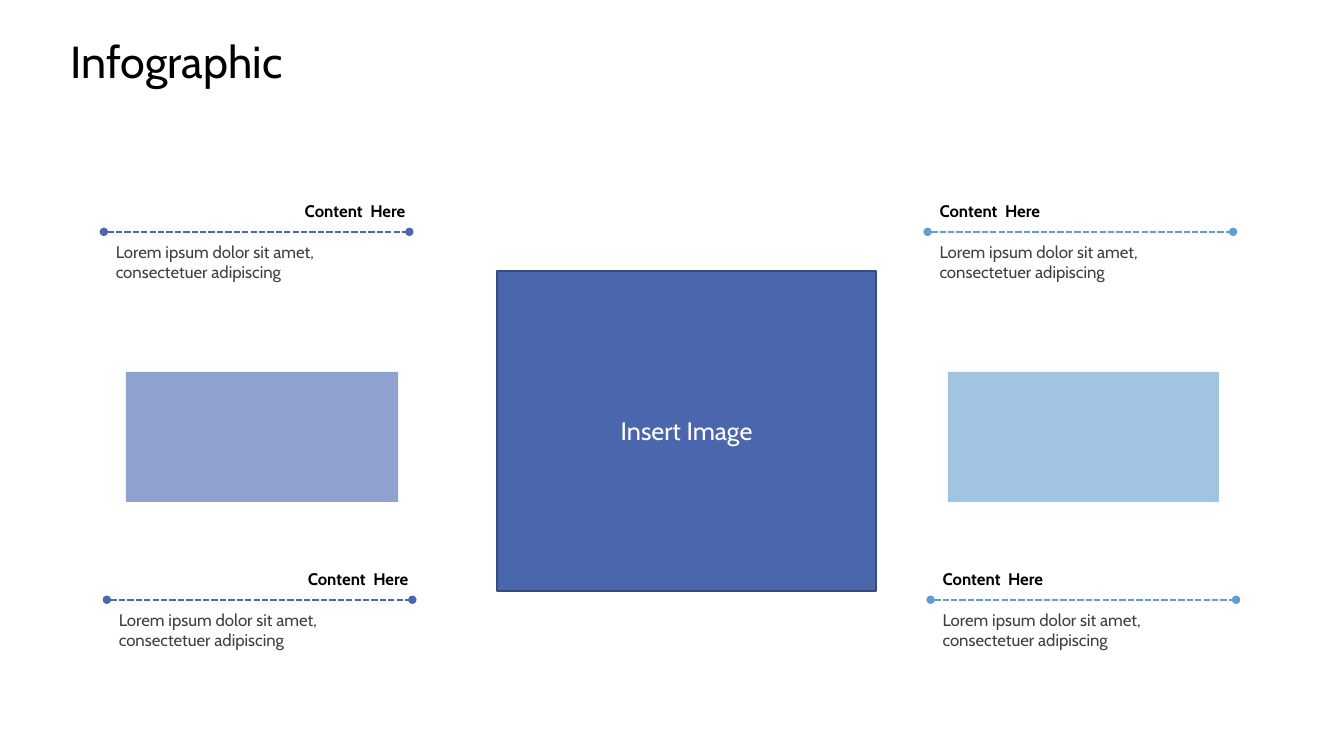
from lxml import etree
from pptx import Presentation
from pptx.dml.color import RGBColor
from pptx.enum import dml, shapes, text
from pptx.oxml.ns import qn
from pptx.util import Inches, Pt

# Content
FONT = "Cabin"
TITLE = "Infographic"
IMAGE_LABEL = "Insert Image"
HEADING = "Content  Here"
BODY = "Lorem ipsum dolor sit amet, consectetuer adipiscing"
BLUE, SKY = "4A66AC", "629DD1"
LEFT, RIGHT = text.PP_ALIGN.LEFT, text.PP_ALIGN.RIGHT

# Columns: left edge, line colour, heading alignment
COLUMNS = [(1.05, BLUE, RIGHT), (9.22, SKY, LEFT)]
# Rows: top edge, shift to the right
ROWS = [(1.94, 0), (5.59, 0.03)]
# Panels: left, top, width, height, fill, outline, label
PANELS = [
    (1.25, 3.69, 2.7, 1.29, "90A2CF", None, None),
    (9.4, 3.69, 2.69, 1.29, "A1C4E3", None, None),
    (4.93, 2.69, 3.76, 3.17, BLUE, "374B7F", IMAGE_LABEL),
]


def color(value):
    return RGBColor.from_string(value)


def write(shape, words, size, ink, align, anchor, bold=False):
    frame = shape.text_frame
    frame.word_wrap = True
    frame.vertical_anchor = anchor
    paragraph = frame.paragraphs[0]
    paragraph.alignment = align
    run = paragraph.add_run()
    run.text = words
    run.font.name = FONT
    run.font.size = Pt(size)
    run.font.bold = bold
    run.font.color.rgb = color(ink)
    return paragraph


def add_text(slide, left, top, width, height, *style, **options):
    box = slide.shapes.add_textbox(*map(Inches, (left, top, width, height)))
    write(box, *style, **options)


def add_dotted_line(slide, left, top, width, ink):
    line = slide.shapes.add_connector(
        shapes.MSO_CONNECTOR.STRAIGHT,
        Inches(left), Inches(top), Inches(left + width), Inches(top))
    line.line.color.rgb = color(ink)
    line.line.width = Pt(1.5)
    line.line.dash_style = dml.MSO_LINE.SQUARE_DOT
    properties = line.line._get_or_add_ln()
    for end in ("a:headEnd", "a:tailEnd"):
        etree.SubElement(properties, qn(end), type="oval")
    etree.SubElement(properties.getparent(), qn("a:effectLst"))


def add_panel(slide, left, top, width, height, fill, outline, label):
    panel = slide.shapes.add_shape(
        shapes.MSO_SHAPE.RECTANGLE, *map(Inches, (left, top, width, height)))
    panel.shadow.inherit = False
    panel.fill.solid()
    panel.fill.fore_color.rgb = color(fill)
    if outline:
        panel.line.color.rgb = color(outline)
        panel.line.width = Pt(1.5)
    else:
        panel.line.fill.background()
    if label:
        write(panel, label, 18, "FFFFFF", text.PP_ALIGN.CENTER, text.MSO_ANCHOR.MIDDLE)


def main():
    presentation = Presentation()
    presentation.slide_width = Inches(13.33)
    presentation.slide_height = Inches(7.5)
    slide = presentation.slides.add_slide(presentation.slide_layouts[5])

    # Title
    title = slide.shapes.title
    title.left, title.top, title.width, title.height = map(
        Inches, (0.6, 0.24, 12.41, 0.79))
    paragraph = write(title, TITLE, 32, "000000", LEFT, text.MSO_ANCHOR.MIDDLE)
    paragraph.line_spacing = 0.9
    title.text_frame.auto_size = text.MSO_AUTO_SIZE.NONE

    # Colour panels and image area
    for panel in PANELS:
        add_panel(slide, *panel)

    # Captions: heading, dashed line, body
    for column, ink, align in COLUMNS:
        for top, shift in ROWS:
            left = column + shift
            add_text(slide, left, top, 3.07, 0.3, HEADING, 12, "000000",
                     align, text.MSO_ANCHOR.MIDDLE, bold=True)
            add_text(slide, left, top + 0.41, 3.06, 0.5, BODY, 12, "404040",
                     LEFT, text.MSO_ANCHOR.TOP)
            add_dotted_line(slide, left - 0.02, top + 0.36, 3.03, ink)

    presentation.save("out.pptx")


if __name__ == "__main__":
    main()
